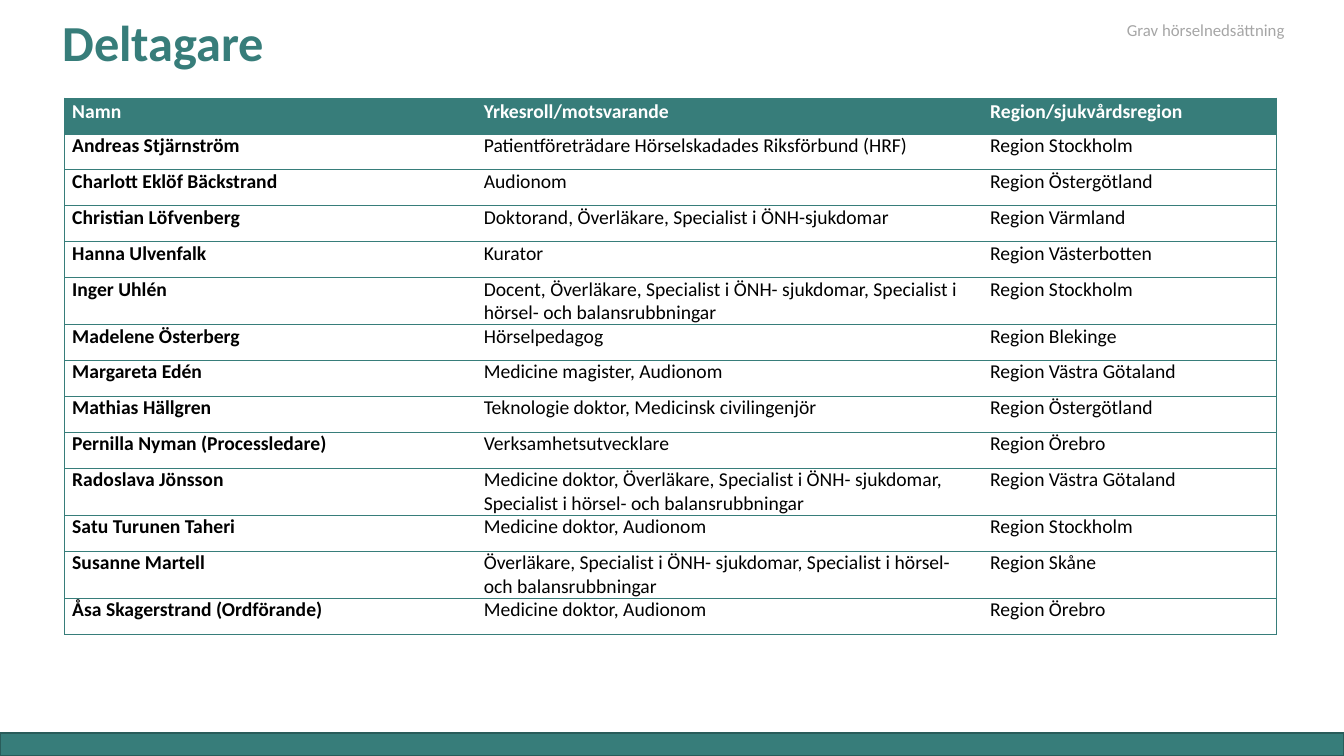
import dataclasses

import lxml.etree
import pptx
import pptx.dml.color
import pptx.enum.shapes
import pptx.enum.text
import pptx.oxml.ns
import pptx.util

Pt = pptx.util.Pt
qn = pptx.oxml.ns.qn


@dataclasses.dataclass(frozen=True)
class Theme:
    font: str = "Calibri"
    teal: str = "377D7A"
    dark_teal: str = "295C5A"
    black: str = "000000"
    white: str = "FFFFFF"
    grey: str = "A6A6A6"
    title_size: float = 36
    body_size: float = 14
    topic_size: float = 12


class SlideBuilder:
    """Draw themed elements on the current slide, with lengths in points."""

    def __init__(self, page, theme):
        self.page = page
        self.theme = theme

    def color(self, value):
        return pptx.dml.color.RGBColor.from_string(value)

    def style(self, para, size, color, bold=False, spacing=None):
        if spacing:
            para.line_spacing = spacing
        for span in para.runs:
            span.font.name = self.theme.font
            span.font.size = Pt(size)
            span.font.bold = bold
            span.font.color.rgb = self.color(color)

    def text(self, left, top, width, height, words, size, color,
             bold=False, spacing=None, middle=False):
        box = self.page.shapes.add_textbox(Pt(left), Pt(top), Pt(width), Pt(height))
        frame = box.text_frame
        frame.word_wrap = True
        if middle:
            frame.vertical_anchor = pptx.enum.text.MSO_ANCHOR.MIDDLE
        frame.text = words
        self.style(frame.paragraphs[0], size, color, bold, spacing)

    def bar(self, left, top, width, height):
        shape = self.page.shapes.add_shape(
            pptx.enum.shapes.MSO_SHAPE.RECTANGLE, Pt(left), Pt(top), Pt(width), Pt(height))
        shape.shadow.inherit = False
        shape.fill.solid()
        shape.fill.fore_color.rgb = self.color(self.theme.teal)
        shape.line.color.rgb = self.color(self.theme.dark_teal)
        shape.line.width = Pt(1)

    def borders(self, cell, visible):
        properties = cell._tc.get_or_add_tcPr()
        for side in "LRTB":
            edge = lxml.etree.SubElement(properties, qn(f"a:ln{side}"), w=str(Pt(0.5)))
            if side in visible:
                fill = lxml.etree.SubElement(edge, qn("a:solidFill"))
                lxml.etree.SubElement(fill, qn("a:srgbClr"), val=self.theme.teal)
            else:
                lxml.etree.SubElement(edge, qn("a:noFill"))

    def cell(self, cell, words, header, first, last):
        cell.margin_left = cell.margin_right = Pt(5.6)
        cell.margin_top = cell.margin_bottom = 0
        self.borders(cell, "TB" + "L" * first + "R" * last)
        if header:
            cell.fill.solid()
            cell.fill.fore_color.rgb = self.color(self.theme.teal)
        else:
            cell.fill.background()
        cell.text = words
        self.style(cell.text_frame.paragraphs[0], self.theme.body_size,
                   self.theme.white if header else self.theme.black,
                   header or first, 1.06 if header else None)

    def table(self, left, top, widths, row_height, rows):
        frame = self.page.shapes.add_table(
            len(rows), len(widths), Pt(left), Pt(top),
            Pt(sum(widths)), Pt(row_height * len(rows)))
        table = frame.table
        table.horz_banding = False
        for column, width in zip(table.columns, widths):
            column.width = Pt(width)
        for index, values in enumerate(rows):
            table.rows[index].height = Pt(row_height)
            for place, words in enumerate(values):
                self.cell(table.cell(index, place), words, index == 0,
                          place == 0, place == len(widths) - 1)


PARTICIPANTS = [
    ("Namn", "Yrkesroll/motsvarande", "Region/sjukvårdsregion"),
    ("Andreas Stjärnström", "Patientföreträdare Hörselskadades Riksförbund (HRF)",
     "Region Stockholm"),
    ("Charlott Eklöf Bäckstrand", "Audionom", "Region Östergötland"),
    ("Christian Löfvenberg", "Doktorand, Överläkare, Specialist i ÖNH-sjukdomar",
     "Region Värmland"),
    ("Hanna Ulvenfalk", "Kurator", "Region Västerbotten"),
    ("Inger Uhlén", "Docent, Överläkare, Specialist i ÖNH- sjukdomar, "
     "Specialist i hörsel- och balansrubbningar", "Region Stockholm"),
    ("Madelene Österberg", "Hörselpedagog", "Region Blekinge"),
    ("Margareta Edén", "Medicine magister, Audionom", "Region Västra Götaland"),
    ("Mathias Hällgren", "Teknologie doktor, Medicinsk civilingenjör",
     "Region Östergötland"),
    ("Pernilla Nyman (Processledare)", "Verksamhetsutvecklare", "Region Örebro"),
    ("Radoslava Jönsson", "Medicine doktor, Överläkare, Specialist i ÖNH- sjukdomar, "
     "Specialist i hörsel- och balansrubbningar", "Region Västra Götaland"),
    ("Satu Turunen Taheri", "Medicine doktor, Audionom", "Region Stockholm"),
    ("Susanne Martell", "Överläkare, Specialist i ÖNH- sjukdomar, "
     "Specialist i hörsel- och balansrubbningar", "Region Skåne"),
    ("Åsa Skagerstrand (Ordförande)", "Medicine doktor, Audionom", "Region Örebro"),
]


def main():
    deck = pptx.Presentation()
    deck.slide_width, deck.slide_height = Pt(960), Pt(540)
    theme = Theme()
    builder = SlideBuilder(deck.slides.add_slide(deck.slide_layouts[6]), theme)

    builder.bar(0, 523.5, 960, 16.5)
    builder.text(37.5, 3, 828, 59, "Deltagare", theme.title_size, theme.teal,
                 bold=True, spacing=0.9, middle=True)
    builder.table(46, 70, [294, 361.7, 210.3], 25.65, PARTICIPANTS)
    builder.text(797.8, 10.8, 135.4, 21.8, "Grav hörselnedsättning",
                 theme.topic_size, theme.grey)
    deck.save("out.pptx")


if __name__ == "__main__":
    main()
